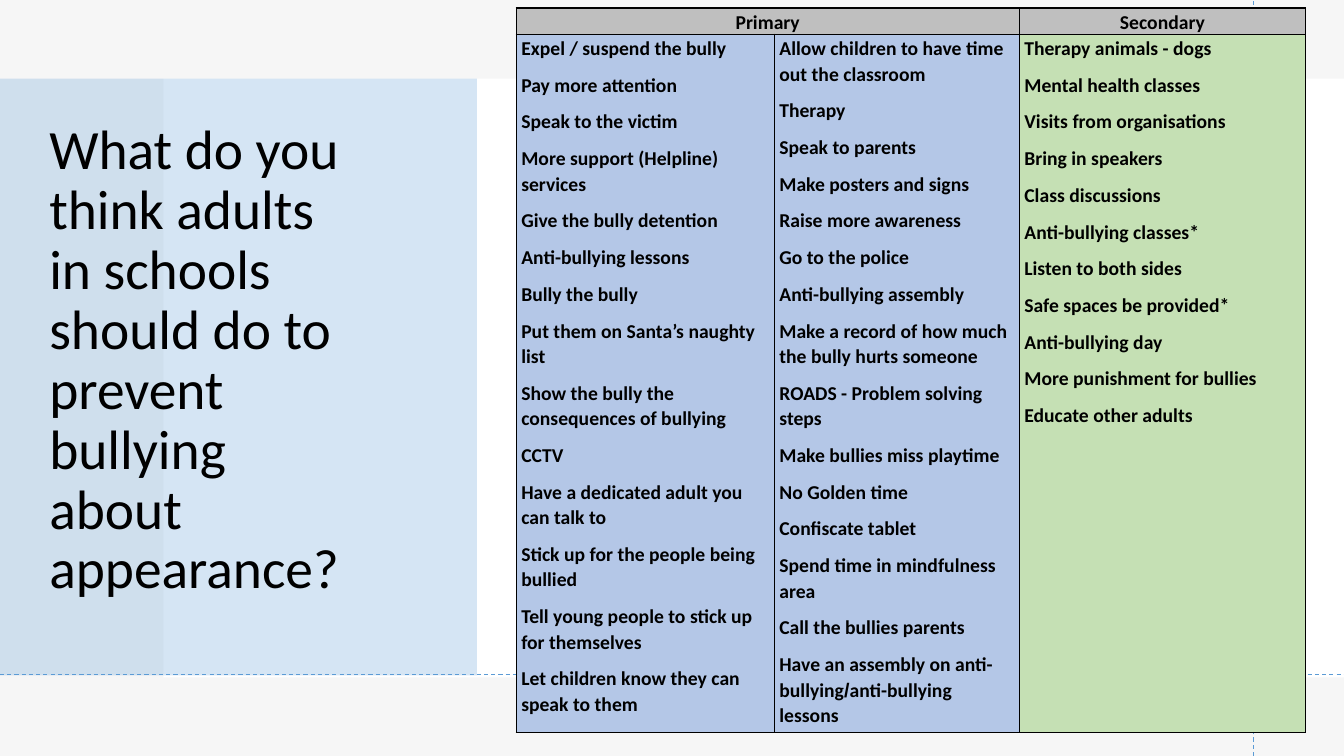
from lxml.etree import SubElement
from pptx import Presentation
from pptx.dml.color import RGBColor
from pptx.enum.dml import MSO_LINE
from pptx.enum.shapes import MSO_CONNECTOR, MSO_SHAPE
from pptx.enum.text import MSO_ANCHOR, PP_ALIGN
from pptx.oxml.ns import qn
from pptx.util import Inches, Pt

COLORS = {
    "white": "FFFFFF",
    "grey": "E7E6E6",
    "accent": "5B9BD5",
    "black": "000000",
    "header": "BFBFBF",
    "primary": "B4C7E7",
    "secondary": "C5E0B4",
}
SLIDE_WIDTH, SLIDE_HEIGHT = 13.33, 7.5
QUESTION = "What do you think adults in schools should do to prevent bullying about appearance?"
PRIMARY_LEFT = [
    "Expel / suspend the bully",
    "Pay more attention",
    "Speak to the victim",
    "More support (Helpline) services",
    "Give the bully detention",
    "Anti-bullying lessons",
    "Bully the bully",
    "Put them on Santa’s naughty list",
    "Show the bully the consequences of bullying",
    "CCTV",
    "Have a dedicated adult you can talk to",
    "Stick up for the people being bullied",
    "Tell young people to stick up for themselves",
    "Let children know they can speak to them",
]
PRIMARY_RIGHT = [
    "Allow children to have time out the classroom",
    "Therapy",
    "Speak to parents",
    "Make posters and signs",
    "Raise more awareness",
    "Go to the police",
    "Anti-bullying assembly",
    "Make a record of how much the bully hurts someone",
    "ROADS - Problem solving steps",
    "Make bullies miss playtime",
    "No Golden time",
    "Confiscate tablet",
    "Spend time in mindfulness area",
    "Call the bullies parents",
    [("Have an assembly on anti-bullying", "Calibri"), ("/", "Arial"),
     ("anti-bullying lessons", "Calibri")],
]
SECONDARY = [
    "Therapy animals - dogs",
    "Mental health classes",
    "Visits from organisations",
    "Bring in speakers",
    "Class discussions",
    "Anti-bullying classes*",
    "Listen to both sides",
    "Safe spaces be provided*",
    "Anti-bullying day",
    "More punishment for bullies",
    "Educate other adults",
]


def color(name):
    return RGBColor.from_string(COLORS[name])


def add_run(paragraph, text, size, font="Calibri", bold=False):
    run = paragraph.add_run()
    run.text = text
    run.font.name = font
    run.font.size = Pt(size)
    run.font.bold = bold
    run.font.color.rgb = color("black")


def add_panel(slide, box, fill, opacity=100):
    shape = slide.shapes.add_shape(MSO_SHAPE.RECTANGLE, *map(Inches, box))
    shape.shadow.inherit = False
    shape.line.fill.background()
    shape.fill.solid()
    shape.fill.fore_color.rgb = color(fill)
    if opacity < 100:
        rgb = shape.fill._xPr.find(qn("a:solidFill"))[0]
        SubElement(rgb, qn("a:alpha"), val=str(opacity * 1000))


def add_backdrop(slide, box):
    left, top, width, height = box
    add_panel(slide, box, "white")
    add_panel(slide, box, "grey", 35)
    add_panel(slide, (left + 1.62, top + 0.78, width - 1.62, 5.94), "white")
    add_panel(slide, (left, top + 0.78, 4.73, 5.92), "accent", 25)


def add_question(slide, box):
    frame = slide.shapes.add_textbox(*map(Inches, box)).text_frame
    frame.word_wrap = True
    frame.vertical_anchor = MSO_ANCHOR.MIDDLE
    paragraph = frame.paragraphs[0]
    paragraph.line_spacing = 0.9
    add_run(paragraph, QUESTION, 39.6)


def add_guides(slide, box):
    left, top, width, height = box
    across, down = left + 12.43, top + 6.69
    for ends in ((across, top + height, across, top), (left, down, left + width, down)):
        connector = slide.shapes.add_connector(MSO_CONNECTOR.STRAIGHT, *map(Inches, ends))
        connector.line.color.rgb = color("accent")
        connector.line.width = Pt(0.75)
        connector.line.dash_style = MSO_LINE.DASH
        SubElement(connector._element.spPr, qn("a:effectLst"))


def add_borders(cell):
    properties = cell._tc.get_or_add_tcPr()
    for position, side in enumerate(("lnL", "lnR", "lnT", "lnB")):
        line = SubElement(properties, qn(f"a:{side}"), w=str(Pt(1)))
        fill = SubElement(line, qn("a:solidFill"))
        SubElement(fill, qn("a:srgbClr"), val=COLORS["black"])
        properties.insert(position, line)


def fill_cell(cell, fill, items, alignment):
    cell.fill.solid()
    cell.fill.fore_color.rgb = color(fill)
    cell.margin_left = cell.margin_right = Inches(0.05)
    cell.margin_top, cell.margin_bottom = Inches(0.01), 0
    add_borders(cell)
    frame = cell.text_frame
    for index, item in enumerate(items):
        paragraph = frame.add_paragraph() if index else frame.paragraphs[0]
        paragraph.alignment = alignment
        paragraph.line_spacing = 1.07
        paragraph.space_after = Pt(8)
        runs = [(item, "Calibri")] if isinstance(item, str) else item
        for text, font in runs:
            add_run(paragraph, text, 14, font, True)


def add_answers(slide, box):
    table = slide.shapes.add_table(2, 3, *map(Inches, box)).table
    table.first_row = table.horz_banding = False
    for column, width in zip(table.columns, (2.56, 2.43, 2.84)):
        column.width = Inches(width)
    for row, height in zip(table.rows, (0.25, 6.93)):
        row.height = Inches(height)
    table.cell(0, 0).merge(table.cell(0, 1))
    for column, heading in enumerate((["Primary"], [], ["Secondary"])):
        fill_cell(table.cell(0, column), "header", heading, PP_ALIGN.CENTER)
    answers = (("primary", PRIMARY_LEFT), ("primary", PRIMARY_RIGHT), ("secondary", SECONDARY))
    for column, (fill, items) in enumerate(answers):
        fill_cell(table.cell(1, column), fill, items, PP_ALIGN.LEFT)


def main():
    presentation = Presentation()
    presentation.slide_width = Inches(SLIDE_WIDTH)
    presentation.slide_height = Inches(SLIDE_HEIGHT)
    slide = presentation.slides.add_slide(presentation.slide_layouts[6])
    full_slide = (0, 0, SLIDE_WIDTH, SLIDE_HEIGHT)
    add_backdrop(slide, full_slide)
    add_question(slide, (0.39, 0.74, 3.32, 5.69))
    add_guides(slide, full_slide)
    add_answers(slide, (5.12, 0.08, 7.83, 7.18))
    presentation.save("out.pptx")


if __name__ == "__main__":
    main()
